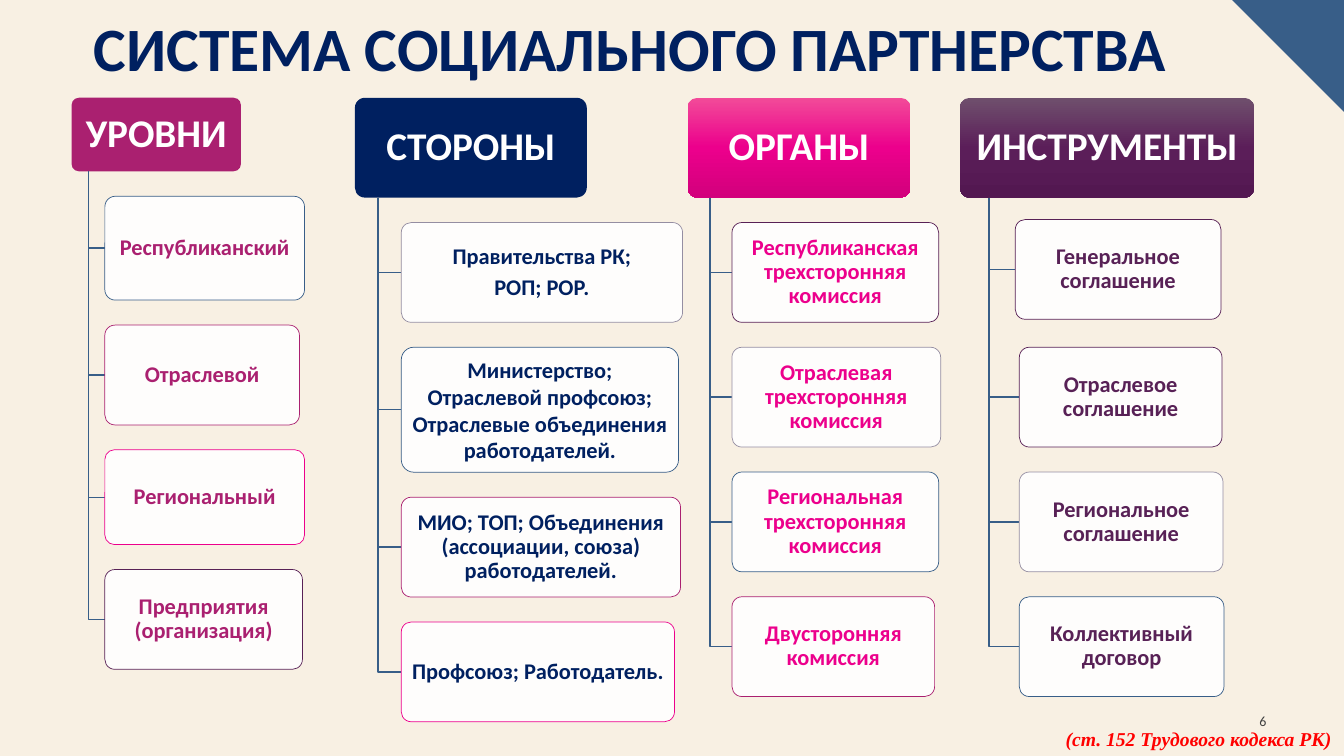
from pptx import Presentation
from pptx.dml.color import RGBColor
from pptx.enum import shapes, text
from pptx.oxml import parse_xml
from pptx.oxml.ns import nsdecls, qn
from pptx.util import Inches, Pt

CREAM = RGBColor(0xF8, 0xF0, 0xE3)
BLUE = RGBColor(0x38, 0x5E, 0x88)
NAVY = RGBColor(0x00, 0x20, 0x60)
PLUM = RGBColor(0xAA, 0x20, 0x70)
PINK = RGBColor(0xEC, 0x00, 0x8C)
PURPLE = RGBColor(0x58, 0x21, 0x56)
GRAY = RGBColor(0x95, 0x8E, 0xA2)
DARK = RGBColor(0x40, 0x40, 0x40)
RED = RGBColor(0xFF, 0x00, 0x00)
WHITE = RGBColor(0xFF, 0xFF, 0xFF)
PINK_SHADES = ("F24B99", "EC008C", "D2007C")
PURPLE_SHADES = ("6F4F6D", "5B1E59", "531851")

WIDTH, HEIGHT = 13.33, 7.5
CORNER = 1.11
HEADER_TOP = 0.97
BOX_HEIGHT = 0.99
GAP = BOX_HEIGHT / 4
TITLE = "СИСТЕМА СОЦИАЛЬНОГО ПАРТНЕРСТВА"
FOOTNOTE = "(ст. 152 Трудового кодекса РК)"

# Header: (text, left, width, height, fill or gradient shades), trunk x, text colour,
# boxes: (paragraphs, left, width, height, outline, upward shift, line spacing)
COLUMNS = [
    (("УРОВНИ", 0.71, 1.68, 0.73, PLUM), 0.88, PLUM, [
        (["Республиканский"], 1.04, 1.98, 1.03, BLUE, 0, 0.9),
        (["Отраслевой"], 1.04, 1.93, BOX_HEIGHT, PLUM, 0, 0.9),
        (["Региональный"], 1.04, 1.98, 0.94, PINK, 0, 0.9),
        (["Предприятия (организация)"], 1.04, 1.96, BOX_HEIGHT, PURPLE, 0, 0.9),
    ]),
    (("СТОРОНЫ", 3.52, 2.3, BOX_HEIGHT, NAVY), 3.75, NAVY, [
        (["Правительства РК;", "РОП; РОР."], 3.98, 2.79, BOX_HEIGHT, GRAY, 0, 0.9),
        (["Министерство;", "Отраслевой профсоюз; Отраслевые объединения работодателей."],
         3.98, 2.75, 1.24, BLUE, 0, 1.0),
        (["МИО; ТОП; Объединения (ассоциации, союза) работодателей."],
         3.98, 2.77, BOX_HEIGHT, PLUM, 0, 0.9),
        (["Профсоюз; Работодатель."], 3.98, 2.71, BOX_HEIGHT, PINK, 0, 0.9),
    ]),
    (("ОРГАНЫ", 6.82, 2.21, BOX_HEIGHT, PINK_SHADES), 7.04, PINK, [
        (["Республиканская трехсторонняя комиссия"], 7.26, 2.05, BOX_HEIGHT, PURPLE, 0, 0.9),
        (["Отраслевая трехсторонняя комиссия"], 7.26, 2.07, BOX_HEIGHT, GRAY, 0, 0.9),
        (["Региональная трехсторонняя комиссия"], 7.26, 2.05, BOX_HEIGHT, BLUE, 0, 0.9),
        (["Двусторонняя комиссия"], 7.26, 2.01, BOX_HEIGHT, PLUM, 0, 0.9),
    ]),
    (("ИНСТРУМЕНТЫ", 9.52, 2.92, BOX_HEIGHT, PURPLE_SHADES), 9.81, PURPLE, [
        (["Генеральное соглашение"], 10.07, 2.04, BOX_HEIGHT, PURPLE, 0.03, 0.9),
        (["Отраслевое соглашение"], 10.11, 2.01, BOX_HEIGHT, PURPLE, 0, 0.9),
        (["Региональное соглашение"], 10.11, 2.02, BOX_HEIGHT, GRAY, 0, 0.9),
        (["Коллективный договор"], 10.11, 2.03, BOX_HEIGHT, BLUE, 0, 0.9),
    ]),
]


def style_paragraph(paragraph, size, color, bold=True, name="Calibri", italic=False):
    for run in paragraph.runs:
        font = run.font
        font.size, font.name, font.bold, font.italic = Pt(size), name, bold, italic
        font.color.rgb = color


def add_outline(slide, points, close):
    points = [(Inches(x), Inches(y)) for x, y in points]
    builder = slide.shapes.build_freeform(*points[0])
    builder.add_line_segments(points[1:], close=close)
    shape = builder.convert_to_shape()
    shape.shadow.inherit = False
    return shape


def add_branch(slide, trunk, top, left, middle):
    branch = add_outline(slide, [(trunk, top), (trunk, middle), (left, middle)], False)
    branch.fill.background()
    branch.line.color.rgb = BLUE
    branch.line.width = Pt(1)


def add_card(slide, lines, left, top, width, height, size, color, spacing, margins):
    """Add a rounded box with centred text; its fill and line are set by the caller."""
    card = slide.shapes.add_shape(shapes.MSO_SHAPE.ROUNDED_RECTANGLE, Inches(left),
                                  Inches(top), Inches(width), Inches(height))
    card.adjustments[0] = 0.1
    card.shadow.inherit = False
    frame = card.text_frame
    frame.word_wrap = True
    frame.vertical_anchor = text.MSO_ANCHOR.MIDDLE
    frame.margin_left = frame.margin_right = Inches(margins[0])
    frame.margin_top = frame.margin_bottom = Inches(margins[1])
    frame.text = "\n".join(lines)
    for paragraph in frame.paragraphs:
        paragraph.alignment = text.PP_ALIGN.CENTER
        paragraph.line_spacing = spacing
        style_paragraph(paragraph, size, color)
    if spacing < 1:
        for paragraph in frame.paragraphs[:-1]:
            paragraph.space_after = Pt(5)
    return card


def fill_header(header, fill):
    header.line.fill.background()
    if isinstance(fill, RGBColor):
        header.fill.solid()
        header.fill.fore_color.rgb = fill
        return
    stops = "".join(f'<a:gs pos="{index * 50000}"><a:srgbClr val="{shade}"/></a:gs>'
                    for index, shade in enumerate(fill))
    gradient = parse_xml(f'<a:gradFill {nsdecls("a")}><a:gsLst>{stops}</a:gsLst>'
                         '<a:lin ang="5400000" scaled="0"/></a:gradFill>')
    header._element.spPr.find(qn("a:prstGeom")).addnext(gradient)


def fill_box(box, outline):
    box.fill.solid()
    box.fill.fore_color.rgb = WHITE
    color = box._element.spPr.find(qn("a:solidFill"))[0]
    color.append(parse_xml(f'<a:alpha {nsdecls("a")} val="90000"/>'))
    box.line.color.rgb = outline
    box.line.width = Pt(0.5)


def add_column(slide, header, trunk, color, boxes):
    label, left, width, height, fill = header
    fill_header(add_card(slide, [label], left, HEADER_TOP, width, height, 28, WHITE,
                         0.9, (0.06, 0.04)), fill)
    bottom = HEADER_TOP + height
    top = bottom + GAP
    for lines, left, width, height, outline, shift, spacing in boxes:
        add_branch(slide, trunk, bottom, left, top - shift + height / 2)
        fill_box(add_card(slide, lines, left, top - shift, width, height, 16, color,
                          spacing, (0.03, 0.02)), outline)
        top += height + GAP


def add_label(slide, label, left, top, width, height):
    box = slide.shapes.add_textbox(Inches(left), Inches(top), Inches(width), Inches(height))
    box.text_frame.text = label
    return box.text_frame


def main():
    presentation = Presentation()
    presentation.slide_width, presentation.slide_height = Inches(WIDTH), Inches(HEIGHT)
    slide = presentation.slides.add_slide(presentation.slide_layouts[5])
    slide.background.fill.solid()
    slide.background.fill.fore_color.rgb = CREAM

    corner = add_outline(slide, [(WIDTH - CORNER, 0), (WIDTH, 0), (WIDTH, CORNER)], True)
    corner.fill.solid()
    corner.fill.fore_color.rgb = BLUE
    corner.line.fill.background()

    title = slide.shapes.title
    title.left, title.top = Inches(0.69), Inches(0.13)
    title.width, title.height = Inches(11.5), Inches(0.89)
    frame = title.text_frame
    frame.text = TITLE
    frame.auto_size = text.MSO_AUTO_SIZE.NONE
    frame.vertical_anchor = text.MSO_ANCHOR.TOP
    frame.margin_left = Inches(0.24)
    paragraph = frame.paragraphs[0]
    paragraph.alignment = text.PP_ALIGN.LEFT
    paragraph.line_spacing = 0.9
    style_paragraph(paragraph, 44, NAVY)

    for column in COLUMNS:
        add_column(slide, *column)

    number = add_label(slide, "6", 12.16, 6.95, 0.5, 0.4)
    number.vertical_anchor = text.MSO_ANCHOR.MIDDLE
    number.paragraphs[0].alignment = text.PP_ALIGN.RIGHT
    style_paragraph(number.paragraphs[0], 10, DARK, bold=False)

    footnote = add_label(slide, FOOTNOTE, 10.47, 7.16, 2.86, 0.34)
    footnote.word_wrap = False
    style_paragraph(footnote.paragraphs[0], 14, RED, name="Times New Roman", italic=True)

    presentation.save("out.pptx")


if __name__ == "__main__":
    main()
